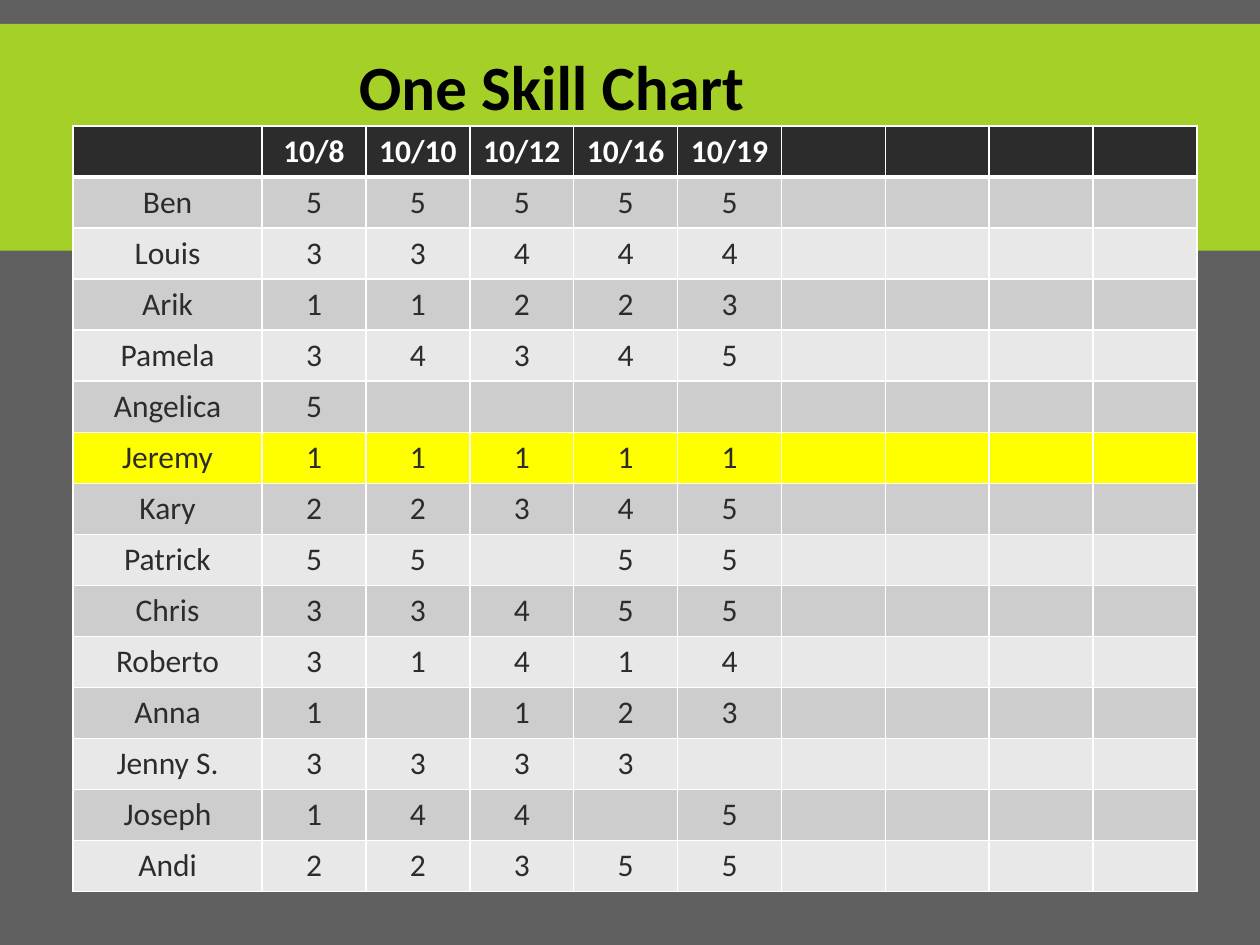
from dataclasses import dataclass

from lxml import etree
from pptx import Presentation
from pptx import util as u
from pptx.dml.color import RGBColor
from pptx.enum import shapes, text
from pptx.oxml.ns import qn

COLORS = {
    "page": "606060",
    "band": "A5D028",
    "header": "2C2C2C",
    "odd": "CDCDCD",
    "even": "E8E8E8",
    "highlight": "FFFF00",
    "ink": "2C2C2C",
    "title": "000000",
    "white": "FFFFFF",
}
FONT = "Calibri"
COLUMNS = 10
NAME_WIDTH = 1.5
LEFT, TOP, WIDTH, HEIGHT = 0.58, 1, 8.92, 6.08


@dataclass
class ScoreRow:
    name: str
    scores: list[str]
    highlighted: bool = False


DATES = ScoreRow("", ["10/8", "10/10", "10/12", "10/16", "10/19"])
STUDENTS = [
    ScoreRow("Ben", ["5", "5", "5", "5", "5"]),
    ScoreRow("Louis", ["3", "3", "4", "4", "4"]),
    ScoreRow("Arik", ["1", "1", "2", "2", "3"]),
    ScoreRow("Pamela", ["3", "4", "3", "4", "5"]),
    ScoreRow("Angelica", ["5"]),
    ScoreRow("Jeremy", ["1", "1", "1", "1", "1"], highlighted=True),
    ScoreRow("Kary", ["2", "2", "3", "4", "5"]),
    ScoreRow("Patrick", ["5", "5", "", "5", "5"]),
    ScoreRow("Chris", ["3", "3", "4", "5", "5"]),
    ScoreRow("Roberto", ["3", "1", "4", "1", "4"]),
    ScoreRow("Anna", ["1", "", "1", "2", "3"]),
    ScoreRow("Jenny S.", ["3", "3", "3", "3"]),
    ScoreRow("Joseph", ["1", "4", "4", "", "5"]),
    ScoreRow("Andi", ["2", "2", "3", "5", "5"]),
]


def paint(fill, color: str) -> None:
    """Give a fill one solid palette colour."""
    fill.solid()
    fill.fore_color.rgb = RGBColor.from_string(COLORS[color])


def style_font(para, size: int, color: str, bold: bool) -> None:
    """Set the font of a whole paragraph."""
    para.font.name = FONT
    para.font.size = u.Pt(size)
    para.font.bold = bold
    para.font.color.rgb = RGBColor.from_string(COLORS[color])


def add_borders(cell, top: int, bottom: int) -> None:
    """Draw white cell borders with the given top and bottom widths in points."""
    properties = cell._tc.get_or_add_tcPr()
    widths = {"a:lnL": 1, "a:lnR": 1, "a:lnT": top, "a:lnB": bottom}
    for position, (tag, width) in enumerate(widths.items()):
        line = etree.Element(qn(tag), w=str(u.Pt(width)))
        fill = etree.SubElement(line, qn("a:solidFill"))
        etree.SubElement(fill, qn("a:srgbClr"), val=COLORS["white"])
        properties.insert(position, line)


def fill_row(table, index: int, row: ScoreRow) -> None:
    """Write and style one table row."""
    header = index == 0
    if header:
        background = "header"
    elif row.highlighted:
        background = "highlight"
    else:
        background = "odd" if index % 2 else "even"
    values = [row.name, *row.scores]
    values += [""] * (COLUMNS - len(values))
    for column, value in enumerate(values):
        cell = table.cell(index, column)
        cell.text = value
        cell.vertical_anchor = text.MSO_ANCHOR.MIDDLE
        cell.margin_left = cell.margin_right = u.Inches(0.05)
        cell.margin_top = cell.margin_bottom = u.Inches(0.04)
        paint(cell.fill, background)
        add_borders(cell, top=3 if index == 1 else 1, bottom=3 if header else 1)
        para = cell.text_frame.paragraphs[0]
        para.alignment = text.PP_ALIGN.CENTER
        style_font(para, 18, "white" if header else "ink", header)


def add_score_table(page) -> None:
    """Add the table of student scores by date."""
    rows = [DATES, *STUDENTS]
    table = page.shapes.add_table(
        len(rows), COLUMNS, u.Inches(LEFT), u.Inches(TOP), u.Inches(WIDTH), u.Inches(HEIGHT)
    ).table
    table.horz_banding = False
    date_width = (WIDTH - NAME_WIDTH) / (COLUMNS - 1)
    for index, column in enumerate(table.columns):
        column.width = u.Inches(date_width if index else NAME_WIDTH)
    for index, row in enumerate(rows):
        table.rows[index].height = u.Inches(HEIGHT / len(rows))
        fill_row(table, index, row)


def add_band(page) -> None:
    """Add the green band across the top."""
    band = page.shapes.add_shape(
        shapes.MSO_SHAPE.RECTANGLE, 0, u.Inches(0.19), u.Inches(10), u.Inches(1.8)
    )
    band.shadow.inherit = False
    paint(band.fill, "band")
    band.line.fill.background()


def add_title(page) -> None:
    """Add the chart title."""
    box = page.shapes.add_textbox(u.Inches(2.75), u.Inches(0.33), u.Inches(4.92), u.Inches(0.71))
    box.text_frame.word_wrap = True
    para = box.text_frame.paragraphs[0]
    para.text = "One Skill Chart"
    style_font(para, 36, "title", True)


def main() -> None:
    """Build and save the slide."""
    deck = Presentation()
    deck.slide_width, deck.slide_height = u.Inches(10), u.Inches(7.5)
    page = deck.slides.add_slide(deck.slide_layouts[6])
    paint(page.background.fill, "page")
    add_band(page)
    add_score_table(page)
    add_title(page)
    deck.save("out.pptx")


if __name__ == "__main__":
    main()
